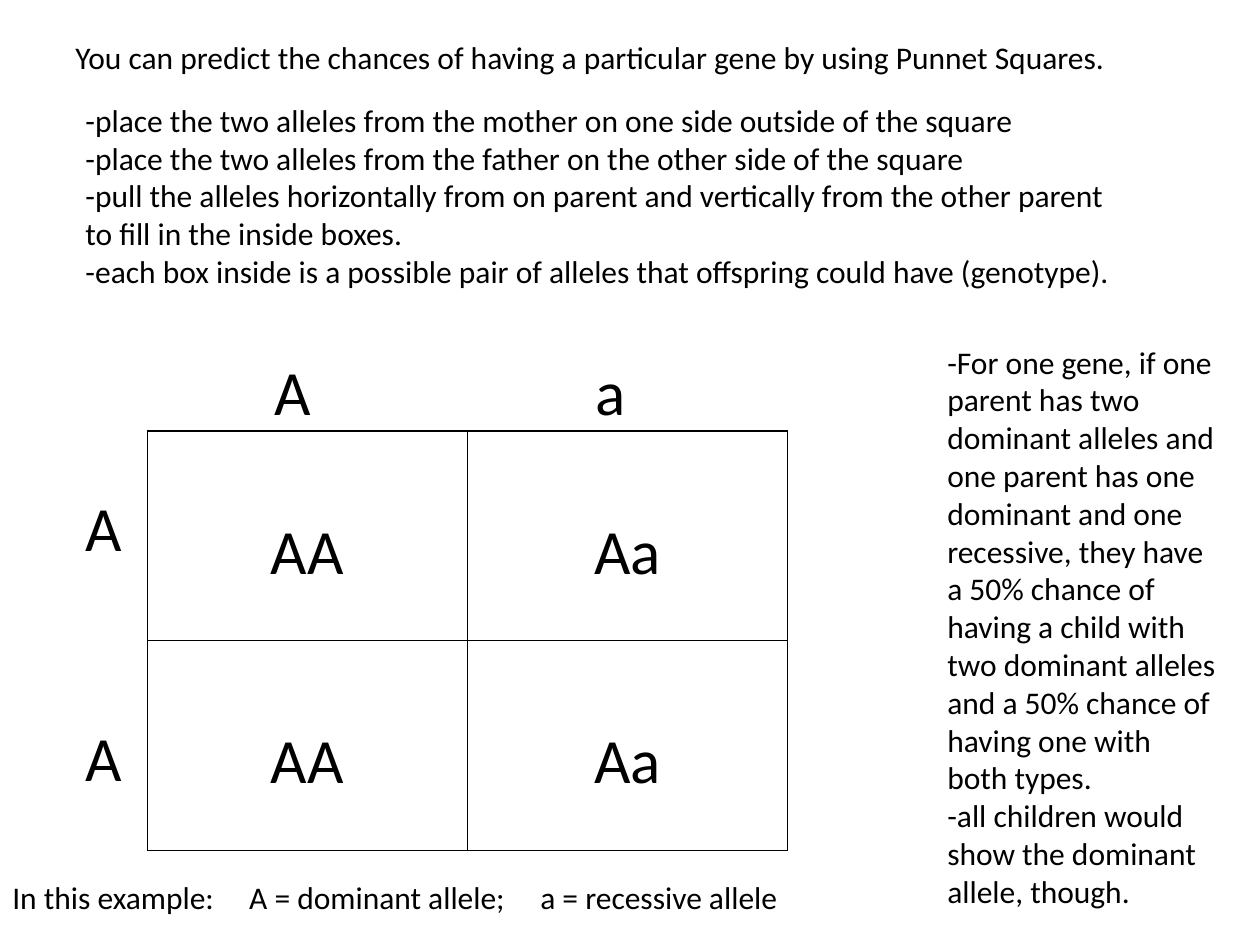
from lxml.etree import SubElement
from pptx import Presentation
from pptx.dml.color import RGBColor
from pptx.enum.text import PP_ALIGN
from pptx.oxml.ns import qn
from pptx.util import Inches, Pt

FONT, INK = "Calibri", "000000"
BODY, LETTER = 18, 36

# Each text: left, top, width, height, size, tab stops, space between paragraphs, lines
TEXTS = [
    (0.5, 0.25, 8.75, 0.4, BODY, [], 0, [
        "You can predict the chances of having a particular gene by using Punnet Squares."]),
    (0.58, 0.75, 8.42, 1.62, BODY, [], 0, [
        "-place the two alleles from the mother on one side outside of the square",
        "-place the two alleles from the father on the other side of the square",
        "-pull the alleles horizontally from on parent and vertically from the other parent "
        "to fill in the inside boxes.",
        "-each box inside is a possible pair of alleles that offspring could have (genotype)."]),
    (1.42, 2.75, 4.5, 0.71, LETTER, [0.66, 3.21], 0, ["\tA\ta"]),
    (0.58, 3.83, 0.5, 2.52, LETTER, [], 88, ["A", "A"]),
    (7.42, 2.67, 2.33, 4.64, BODY, [], 0, [
        "-For one gene, if one parent has two dominant alleles and one parent has one dominant "
        "and one recessive, they have a 50% chance of having a child with two dominant alleles "
        "and a 50% chance of having one with both types.",
        "-all children would show the dominant allele, though."]),
    (0, 6.92, 6.33, 0.4, BODY, [1.88, 4.19], 0, [
        "In this example:\tA = dominant allele;\ta = recessive allele"]),
]
GENOTYPES = [["AA", "Aa"], ["AA", "Aa"]]
SQUARE = (1.17, 3.42, 5.08, 3.33)
CELL_TOP = 0.66


def color(value):
    return RGBColor.from_string(value)


def style(paragraph, size):
    for span in paragraph.runs:
        span.font.name = FONT
        span.font.size = Pt(size)
        span.font.color.rgb = color(INK)


def set_tabs(paragraph, stops):
    if stops:
        tab_list = SubElement(paragraph._p.get_or_add_pPr(), qn("a:tabLst"))
        for stop in stops:
            SubElement(tab_list, qn("a:tab"), pos=str(Inches(stop)), algn="l")


def add_text(page, left, top, width, height, size, stops, gap, lines):
    box = page.shapes.add_textbox(*map(Inches, (left, top, width, height)))
    frame = box.text_frame
    frame.word_wrap = True
    frame.text = "\n".join(lines)
    for index, paragraph in enumerate(frame.paragraphs):
        if index and gap:
            paragraph.space_before = Pt(gap)
        set_tabs(paragraph, stops)
        style(paragraph, size)


def set_borders(cell):
    properties = cell._tc.get_or_add_tcPr()
    for position, side in enumerate(("lnL", "lnR", "lnT", "lnB")):
        line = SubElement(properties, qn(f"a:{side}"), w=str(Pt(1)))
        fill = SubElement(line, qn("a:solidFill"))
        SubElement(fill, qn("a:srgbClr"), val=INK)
        properties.remove(line)
        properties.insert(position, line)


def add_punnett_square(page):
    frame = page.shapes.add_table(len(GENOTYPES), len(GENOTYPES[0]), *map(Inches, SQUARE))
    table = frame.table
    table.first_row = table.horz_banding = False
    for row, genotypes in enumerate(GENOTYPES):
        for column, genotype in enumerate(genotypes):
            cell = table.cell(row, column)
            cell.text = genotype
            cell.margin_top = Inches(CELL_TOP)
            cell.fill.background()
            paragraph = cell.text_frame.paragraphs[0]
            paragraph.alignment = PP_ALIGN.CENTER
            style(paragraph, LETTER)
            set_borders(cell)


def main():
    deck = Presentation()
    deck.slide_width, deck.slide_height = Inches(10), Inches(7.5)
    page = deck.slides.add_slide(deck.slide_layouts[6])
    add_punnett_square(page)
    for text in TEXTS:
        add_text(page, *text)
    deck.save("out.pptx")


if __name__ == "__main__":
    main()
